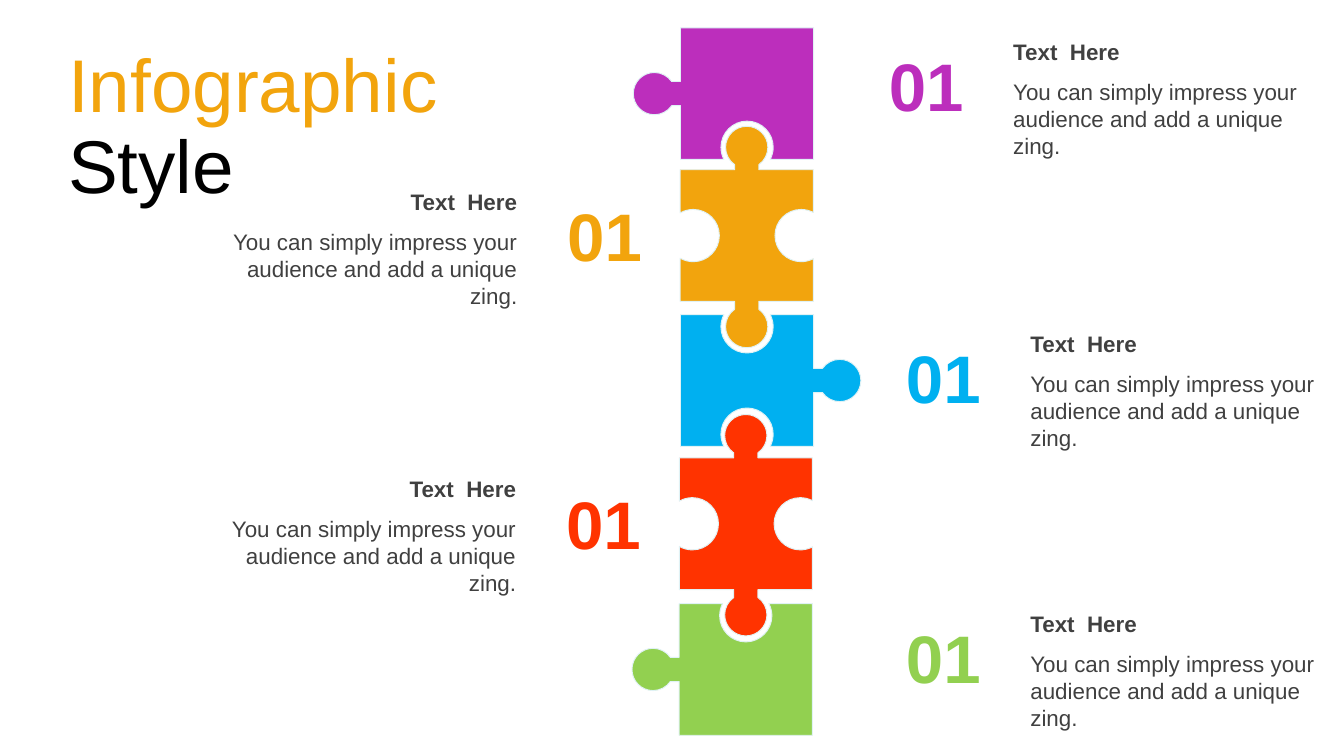
import math
import pptx
import pptx.util
import pptx.dml.color
import pptx.enum.text
import lxml.etree
from pptx.oxml.ns import qn

Pt = pptx.util.Pt
Align = pptx.enum.text.PP_ALIGN
Anchor = pptx.enum.text.MSO_ANCHOR

WIDE, HIGH = 71.3, 70.5
NECK = 6.5
KNOB, DENT = 11.3, 14


def paint(fill, tone):
    fill.solid()
    fill.fore_color.rgb = pptx.dml.color.RGBColor.from_string(tone)


def write(slide, box, runs, size, align=Align.LEFT, bold=False):
    area = slide.shapes.add_textbox(*[Pt(n) for n in box])
    frame = area.text_frame
    frame.word_wrap = True
    para = frame.paragraphs[0]
    para.alignment = align
    for words, tone in runs:
        run = para.add_run()
        run.text = words
        run.font.name = "Arial"
        run.font.size = Pt(size)
        run.font.bold = bold
        paint(run.font.fill, tone)
    return frame


def bend(size, reach, start, end):
    pull = size * 4 / 3 * math.tan((end - start) / 4)

    def spot(angle, slip):
        sin, cos = math.sin(angle), math.cos(angle)
        return size * sin + slip * cos, reach + size * cos - slip * sin

    return [spot(start, pull), spot(end, -pull), spot(end, 0)]


def edge(start, end, reach):
    span = math.dist(start, end)
    ux, uy = [(b - a) / span for a, b in zip(start, end)]

    def place(along, out):
        return (start[0] + ux * (span / 2 + along) + uy * out,
                start[1] + uy * (span / 2 + along) - ux * out)

    if reach == 0:
        return [[end]]
    half = math.pi / 2
    if reach > 0:
        size = KNOB
        turn = math.pi - math.asin(NECK / size)
        angles = [-turn, -half, 0, half, turn]
    else:
        size = DENT
        turn = math.acos(-reach / size)
        angles = [-turn, -half, -2 * half, -3 * half, turn - 4 * half]
    first = size * math.sin(angles[0]), reach + size * math.cos(angles[0])
    moves = [[first]]
    moves += [bend(size, reach, a, b) for a, b in zip(angles, angles[1:])]
    if reach > 0:
        moves = [[(-NECK, 0)]] + moves + [[(NECK, 0)]]
    return [[place(*spot) for spot in move] for move in moves] + [[end]]


def curve(shape, moves):
    lines = list(shape._element.iter(qn("a:lnTo")))
    for move in moves:
        group, lines = lines[:len(move)], lines[len(move):]
        if len(move) == 3:
            arc = lxml.etree.Element(qn("a:cubicBezTo"))
            group[0].addprevious(arc)
            for line in group:
                arc.append(line[0])
                line.getparent().remove(line)


def piece(slide, left, top, tone, sides):
    right, base = left + WIDE, top + HIGH
    ends = [(left, top), (right, top), (right, base), (left, base)]
    moves = []
    for i, reach in enumerate(sides):
        moves += edge(ends[i], ends[(i + 1) % 4], reach)
    pen = slide.shapes.build_freeform(
        round(left * 100), round(top * 100), scale=Pt(1) / 100)
    pen.add_line_segments([(round(x * 100), round(y * 100))
                           for move in moves for x, y in move])
    shape = pen.convert_to_shape()
    curve(shape, moves)
    shape.shadow.inherit = False
    paint(shape.fill, tone)
    paint(shape.line.fill, "E0F2F5")
    shape.line.width = Pt(0.5)


def label(slide, left, top, tone, shift, align):
    frame = write(slide, (left, top, 72, 51), [("01", tone)], 36,
                  Align.CENTER, True)
    props = frame.paragraphs[0].runs[0].font._element
    line = lxml.etree.Element(qn("a:ln"), w=str(Pt(1)))
    fill = lxml.etree.SubElement(line, qn("a:solidFill"))
    lxml.etree.SubElement(fill, qn("a:srgbClr"), val="FFFFFF")
    props.insert(0, line)
    side, head = left + shift, top - 3.6
    write(slide, (side, head, 168, 21.8), [("Text  Here", "404040")], 12,
          align, True)
    words = "You can simply impress your audience and add a unique zing."
    write(slide, (side, head + 21.6, 168, 51), [(words, "404040")], 12, align)


def title(slide, box):
    runs = [("Infographic ", "F2A40D"), ("Style", "000000")]
    frame = write(slide, box, runs, 40)
    frame.vertical_anchor = Anchor.MIDDLE
    frame.margin_bottom = Pt(6.4)
    para = frame.paragraphs[0]
    para.line_spacing = 0.9
    para.space_before = Pt(10)


def main():
    deck = pptx.Presentation()
    deck.slide_width, deck.slide_height = Pt(720), Pt(405)
    slide = deck.slides.add_slide(deck.slide_layouts[6])

    both = (12, -6.5, 13.5, -7)
    pieces = [
        (364.4, 91, "F2A40D", both),
        (364.6, 14.9, "BC2EBC", (0, 0, -6.5, 14)),
        (363.9, 245.4, "FF3300", both),
        (363.9, 323.4, "92D050", (-6.5, 0, 0, 14)),
        (364.6, 168.6, "00B0F0", (-6.5, 14, -6.5, 0)),
    ]
    for part in pieces:
        piece(slide, *part)

    title(slide, (29.5, 22.3, 228.2, 96.5))

    east, west = (75.5, Align.LEFT), (-171.7, Align.RIGHT)
    labels = [
        (460.2, 20.2, "BC2EBC", east),
        (469.4, 176.8, "00B0F0", east),
        (469.4, 326.7, "92D050", east),
        (287.9, 100.8, "F2A40D", west),
        (287.3, 254.6, "FF3300", west),
    ]
    for left, top, tone, side in labels:
        label(slide, left, top, tone, *side)

    deck.save("out.pptx")


if __name__ == "__main__":
    main()
